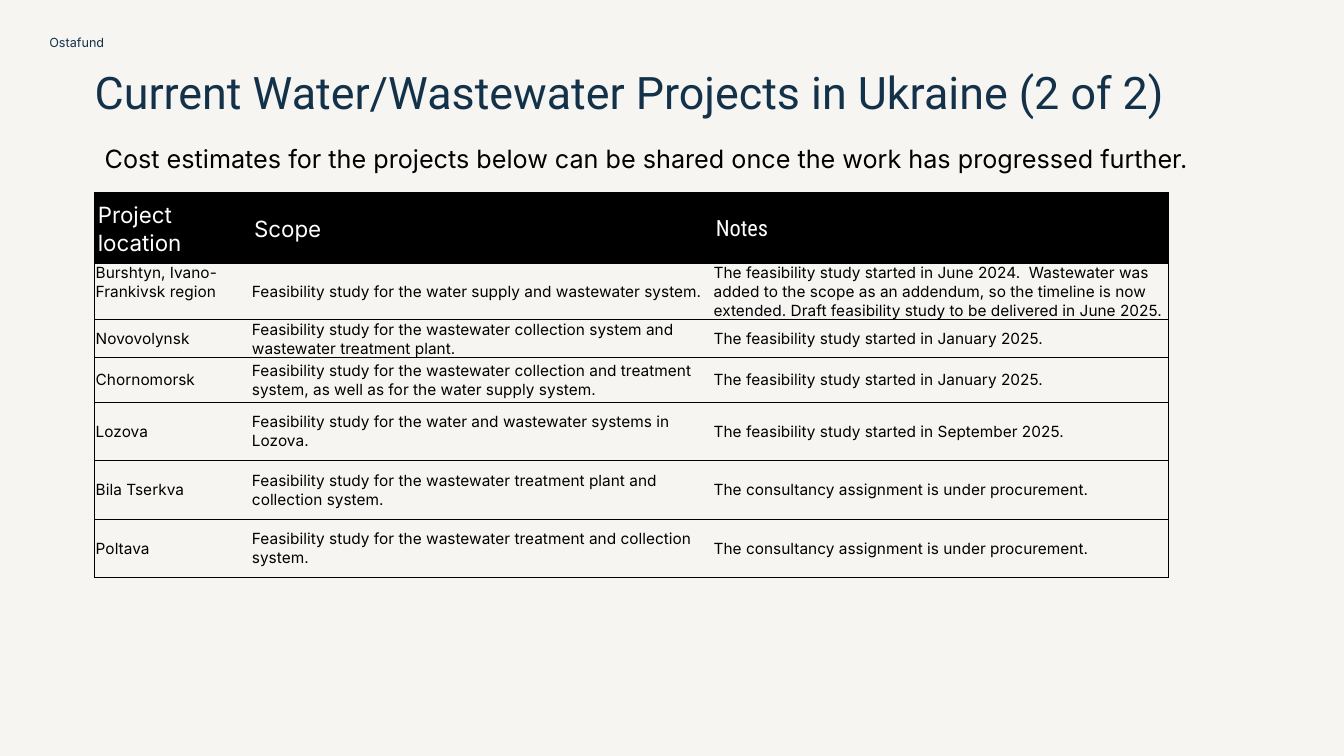
from dataclasses import dataclass

from lxml.etree import SubElement
from pptx import Presentation
from pptx.dml.color import RGBColor
from pptx.enum.text import MSO_ANCHOR
from pptx.oxml.ns import qn
from pptx.util import Pt

COLORS = {"background": "F6F5F2", "navy": "13324A", "black": "000000", "white": "FFFFFF"}


@dataclass
class Style:
    size: float
    color: str
    font: str = "Inter"


@dataclass
class Label:
    text: str
    box: tuple[float, float, float, float]
    style: Style
    insets: tuple[float, float, float, float] = (7.2, 3.6, 7.2, 3.6)
    anchor: MSO_ANCHOR = MSO_ANCHOR.BOTTOM
    line_spacing: float = 1.0


@dataclass
class Project:
    height: float
    location: str
    scope: str
    notes: str


LABELS = [
    Label("Ostafund", (35.3, 18.7, 64, 17.3), Style(9, "navy"), (0, 0, 0, 0)),
    Label("Current Water/Wastewater Projects in Ukraine (2 of 2)", (67.7, 49, 839.5, 39.6),
          Style(32, "navy", "Roboto"), (0, 3.6, 7.2, 3.6), line_spacing=0.9),
    Label("Cost estimates for the projects below can be shared once the work has progressed further.",
          (67.7, 98.6, 804.2, 29), Style(18, "black"), anchor=MSO_ANCHOR.TOP),
]

PROJECTS = [
    Project(29.5, "Burshtyn, Ivano-Frankivsk region",
            "Feasibility study for the water supply and wastewater system.",
            "The feasibility study started in June 2024.  Wastewater was added to the scope as an "
            "addendum, so the timeline is now extended. Draft feasibility study to be delivered in June 2025."),
    Project(26.6, "Novovolynsk",
            "Feasibility study for the wastewater collection system and wastewater treatment plant.",
            "The feasibility study started in January 2025."),
    Project(31.7, "Chornomorsk",
            "Feasibility study for the wastewater collection and treatment system, "
            "as well as for the water supply system.",
            "The feasibility study started in January 2025."),
    Project(41.8, "Lozova",
            "Feasibility study for the water and wastewater systems in Lozova.",
            "The feasibility study started in September 2025."),
    Project(41.8, "Bila Tserkva",
            "Feasibility study for the wastewater treatment plant and collection system.",
            "The consultancy assignment is under procurement."),
    Project(41.8, "Poltava",
            "Feasibility study for the wastewater treatment and collection system.",
            "The consultancy assignment is under procurement."),
]

HEADER = Project(50.4, "Project location", "Scope", "Notes")
HEADER_STYLES = [Style(16, "white"), Style(16, "white"), Style(16, "white", "Roboto Condensed")]
BODY_STYLE = Style(11, "black")
COLUMN_WIDTHS = [111.6, 329.8, 325.4]
HEADER_INSETS = (2.2, 5.8, 1.4, 3.6)
BODY_INSETS = (0.7, 0.7, 0.7, 0)


def rgb(name: str) -> RGBColor:
    return RGBColor.from_string(COLORS[name])


def add_run(p, text: str, style: Style) -> None:
    r = p.add_run()
    r.text = text
    r.font.size = Pt(style.size)
    r.font.name = style.font
    r.font.bold = False
    r.font.color.rgb = rgb(style.color)


def set_insets(frame, insets: tuple[float, float, float, float]) -> None:
    frame.margin_left, frame.margin_top, frame.margin_right, frame.margin_bottom = map(Pt, insets)


def add_label(s, label: Label) -> None:
    tf = s.shapes.add_textbox(*map(Pt, label.box)).text_frame
    tf.word_wrap = True
    tf.vertical_anchor = label.anchor
    set_insets(tf, label.insets)
    p = tf.paragraphs[0]
    p.line_spacing = label.line_spacing
    add_run(p, label.text, label.style)


def set_borders(cell, visible: str) -> None:
    """Draw the sides named in visible (of L, R, T, B) and clear the others."""
    props = cell._tc.get_or_add_tcPr()
    for i, side in enumerate("LRTB"):
        ln = SubElement(props, qn(f"a:ln{side}"), w=str(Pt(0.5)))
        if side in visible:
            fill = SubElement(ln, qn("a:solidFill"))
            SubElement(fill, qn("a:srgbClr"), val=COLORS["black"])
        else:
            SubElement(ln, qn("a:noFill"))
        props.insert(i, ln)


def add_project_table(s) -> None:
    rows = [HEADER, *PROJECTS]
    table = s.shapes.add_table(len(rows), len(COLUMN_WIDTHS), Pt(67.7), Pt(137.5),
                               Pt(sum(COLUMN_WIDTHS)), Pt(sum(row.height for row in rows))).table
    table.first_row = table.horz_banding = False
    for column, width in zip(table.columns, COLUMN_WIDTHS):
        column.width = Pt(width)
    outer_sides = ["L", "", "R"]
    for i, row in enumerate(rows):
        table.rows[i].height = Pt(row.height)
        for j, text in enumerate((row.location, row.scope, row.notes)):
            cell = table.cell(i, j)
            # The two-line location sits at the top of its tall row
            top = row is PROJECTS[0] and j == 0
            cell.vertical_anchor = MSO_ANCHOR.TOP if top else MSO_ANCHOR.MIDDLE
            if row is HEADER:
                cell.fill.solid()
                cell.fill.fore_color.rgb = rgb("black")
            else:
                cell.fill.background()
            set_insets(cell, HEADER_INSETS if row is HEADER else BODY_INSETS)
            set_borders(cell, "TB" + outer_sides[j])
            add_run(cell.text_frame.paragraphs[0], text,
                    HEADER_STYLES[j] if row is HEADER else BODY_STYLE)


def main() -> None:
    prs = Presentation()
    prs.slide_width, prs.slide_height = Pt(960), Pt(540)
    s = prs.slides.add_slide(prs.slide_layouts[6])
    s.background.fill.solid()
    s.background.fill.fore_color.rgb = rgb("background")

    # Organisation name, title and introduction
    for label in LABELS:
        add_label(s, label)

    # Projects
    add_project_table(s)
    prs.save("out.pptx")


if __name__ == "__main__":
    main()
